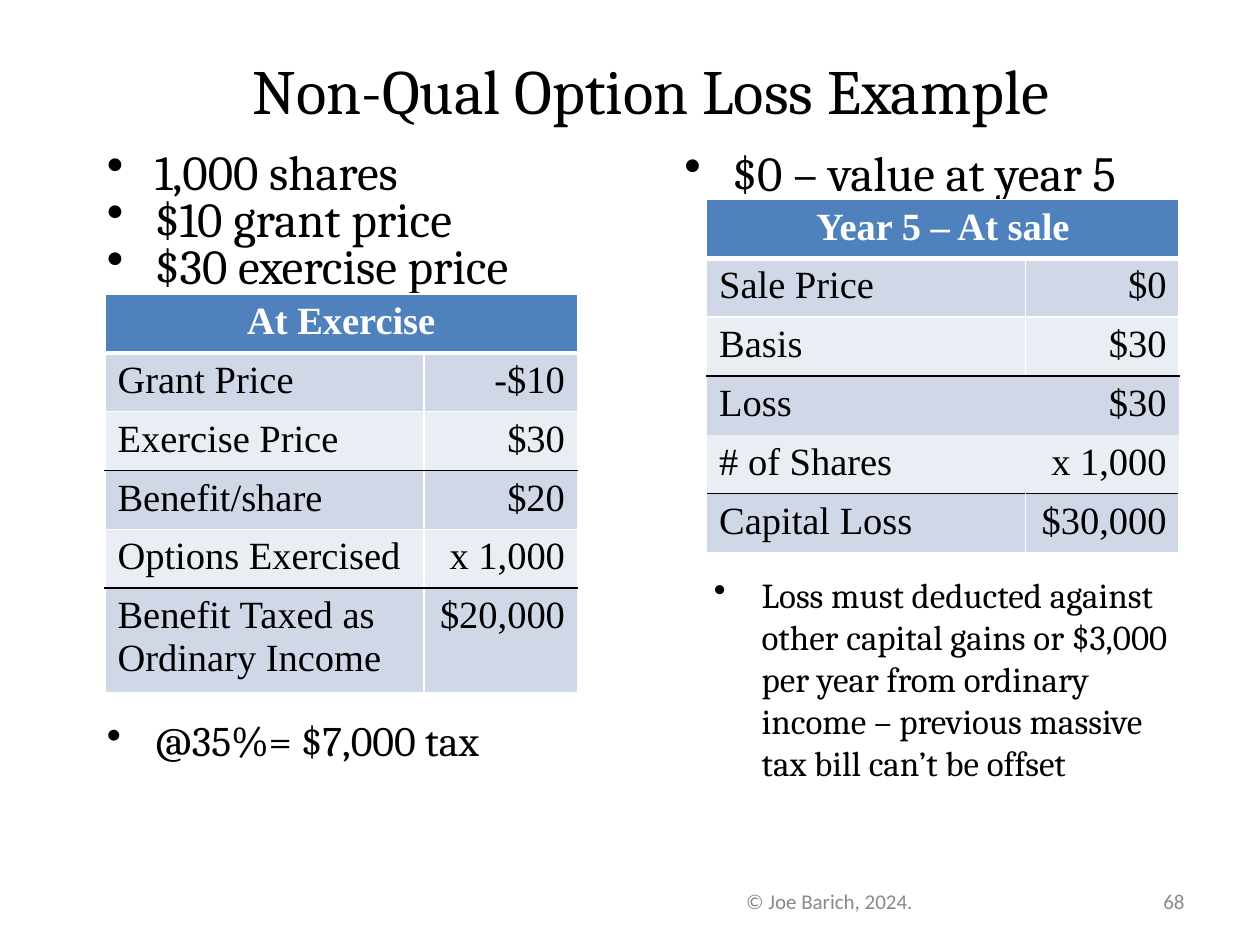
from dataclasses import dataclass

from lxml.etree import SubElement
from pptx import Presentation
from pptx.dml.color import RGBColor
from pptx.enum.text import MSO_ANCHOR as Anchor, PP_ALIGN as Align
from pptx.oxml.ns import qn
from pptx.slide import Slide
from pptx.table import _Cell as Cell
from pptx.text.text import _Paragraph as Paragraph
from pptx.util import Emu, Inches, Pt

BLACK = RGBColor(0x00, 0x00, 0x00)
WHITE = RGBColor(0xFF, 0xFF, 0xFF)
PAGE_GRAY = RGBColor(0x8C, 0x8C, 0x8C)
FOOTER_GRAY = RGBColor(0x89, 0x89, 0x89)
HEADER_BLUE = RGBColor(0x4F, 0x81, 0xBD)
BAND_DARK = RGBColor(0xD0, 0xD8, 0xE8)
BAND_LIGHT = RGBColor(0xE9, 0xED, 0xF4)

GRID_COLUMNS, GRID_ROWS = 120, 90
SLIDE_WIDTH, SLIDE_HEIGHT = Inches(10), Inches(7.5)
BULLET_INDENT = Inches(0.38)
TABLE_COLUMNS = (30.36, 14.64)
TABLE_ROW = 5.25
RULED_ROWS = (2, 4)


@dataclass(frozen=True)
class Area:
    column: float
    row: float
    columns: float
    rows: float

    def box(self) -> tuple[Emu, Emu, Emu, Emu]:
        return (across(self.column), down(self.row),
                across(self.columns), down(self.rows))


@dataclass(frozen=True)
class TextBlock:
    area: Area
    lines: tuple[str, ...]
    size: int
    font: str = "Cambria"
    color: RGBColor = BLACK
    align: Align = Align.LEFT
    anchor: Anchor = Anchor.TOP
    bulleted: bool = False
    line_spacing: float = 1.0


@dataclass(frozen=True)
class Ledger:
    column: float
    row: float
    heading: str
    entries: tuple[tuple[str, str], ...]
    last_row: float = TABLE_ROW
    open_rows: tuple[int, ...] = ()


TEXT_BLOCKS = (
    TextBlock(Area(7, 3, 110, 11), ("Non-Qual Option Loss Example",), 36,
              align=Align.CENTER, anchor=Anchor.MIDDLE),
    TextBlock(Area(9, 14, 46, 14),
              ("1,000 shares", "$10 grant price", "$30 exercise price"), 28,
              bulleted=True, line_spacing=0.8),
    TextBlock(Area(9, 67.5, 46, 9.5), ("@35%= $7,000 tax",), 24, bulleted=True),
    TextBlock(Area(64, 13, 52, 6), ("$0 – value at year 5",), 28, bulleted=True),
    TextBlock(Area(66.8, 54, 46.7, 26),
              ("Loss must deducted against other capital gains or $3,000 per year "
               "from ordinary income – previous massive tax bill can’t be offset",),
              20, bulleted=True),
    TextBlock(Area(60, 83.4, 38, 4.8), ("© Joe Barich, 2024.",), 12, "Calibri",
              FOOTER_GRAY, Align.CENTER, Anchor.MIDDLE),
    TextBlock(Area(100, 83.4, 14, 4.8), ("68",), 12, "Calibri",
              PAGE_GRAY, Align.RIGHT, Anchor.MIDDLE),
)

LEDGERS = (
    Ledger(10, 28, "At Exercise",
           (("Grant Price", "-$10"), ("Exercise Price", "$30"),
            ("Benefit/share", "$20"), ("Options Exercised", "x 1,000"),
            ("Benefit Taxed as Ordinary Income", "$20,000")), last_row=9.25),
    Ledger(67.3, 19, "Year 5 – At sale",
           (("Sale Price", "$0"), ("Basis", "$30"), ("Loss", "$30"),
            ("# of Shares", "x 1,000"), ("Capital Loss", "$30,000")),
           open_rows=(3, 4)),
)


def across(columns: float) -> Emu:
    return Emu(round(SLIDE_WIDTH * columns / GRID_COLUMNS))


def down(rows: float) -> Emu:
    return Emu(round(SLIDE_HEIGHT * rows / GRID_ROWS))


def add_bullet(paragraph: Paragraph) -> None:
    properties = paragraph._p.get_or_add_pPr()
    properties.set("marL", str(BULLET_INDENT))
    properties.set("indent", str(-BULLET_INDENT))
    SubElement(properties, qn("a:buChar"), char="•")


def format_paragraph(paragraph: Paragraph, size: int, font: str,
                     color: RGBColor, align: Align, bold: bool = False) -> None:
    paragraph.alignment = align
    for run in paragraph.runs:
        run.font.size = Pt(size)
        run.font.name = font
        run.font.bold = bold
        run.font.color.rgb = color


def add_text(slide: Slide, block: TextBlock) -> None:
    text_frame = slide.shapes.add_textbox(*block.area.box()).text_frame
    text_frame.word_wrap = True
    text_frame.vertical_anchor = block.anchor
    text_frame.text = "\n".join(block.lines)
    for paragraph in text_frame.paragraphs:
        if block.bulleted:
            add_bullet(paragraph)
        paragraph.line_spacing = block.line_spacing
        format_paragraph(paragraph, block.size, block.font, block.color, block.align)


def add_border(cell: Cell, side: str, color: RGBColor | None, width: float) -> None:
    properties = cell._tc.get_or_add_tcPr()
    line = SubElement(properties, qn(f"a:ln{side}"), w=str(Pt(width)))
    if color is None:
        SubElement(line, qn("a:noFill"))
    else:
        fill = SubElement(line, qn("a:solidFill"))
        SubElement(fill, qn("a:srgbClr"), val=str(color))


def edge_style(edge: int, open_rows: tuple[int, ...]) -> tuple[RGBColor | None, float]:
    if edge in RULED_ROWS:
        return BLACK, 1
    if edge in open_rows:
        return None, 1
    return WHITE, 3 if edge == 0 else 1


def style_cell(cell: Cell, row: int, open_rows: tuple[int, ...]) -> None:
    side_color = None if row in open_rows else WHITE
    add_border(cell, "L", side_color, 1)
    add_border(cell, "R", side_color, 1)
    add_border(cell, "T", *edge_style(row - 1, open_rows))
    add_border(cell, "B", *edge_style(row, open_rows))
    cell.fill.solid()
    band = BAND_DARK if row % 2 else BAND_LIGHT
    cell.fill.fore_color.rgb = band if row else HEADER_BLUE


def add_ledger(slide: Slide, ledger: Ledger) -> None:
    heights = [TABLE_ROW] * len(ledger.entries) + [ledger.last_row]
    area = Area(ledger.column, ledger.row, sum(TABLE_COLUMNS), sum(heights))
    table = slide.shapes.add_table(len(heights), len(TABLE_COLUMNS), *area.box()).table
    for column, width in zip(table.columns, TABLE_COLUMNS):
        column.width = across(width)
    table.cell(0, 0).merge(table.cell(0, 1))
    for index, values in enumerate(((ledger.heading, ""), *ledger.entries)):
        table.rows[index].height = down(heights[index])
        for position, value in enumerate(values):
            cell = table.cell(index, position)
            style_cell(cell, index, ledger.open_rows)
            if not value:
                continue
            cell.text_frame.text = value
            align = Align.RIGHT if position else Align.LEFT
            format_paragraph(cell.text_frame.paragraphs[0], 22, "Times New Roman",
                             BLACK if index else WHITE,
                             align if index else Align.CENTER, bold=index == 0)


def main() -> None:
    presentation = Presentation()
    presentation.slide_width = SLIDE_WIDTH
    presentation.slide_height = SLIDE_HEIGHT
    slide = presentation.slides.add_slide(presentation.slide_layouts[6])
    for block in TEXT_BLOCKS:
        add_text(slide, block)
    for ledger in LEDGERS:
        add_ledger(slide, ledger)
    presentation.save("out.pptx")


if __name__ == "__main__":
    main()
